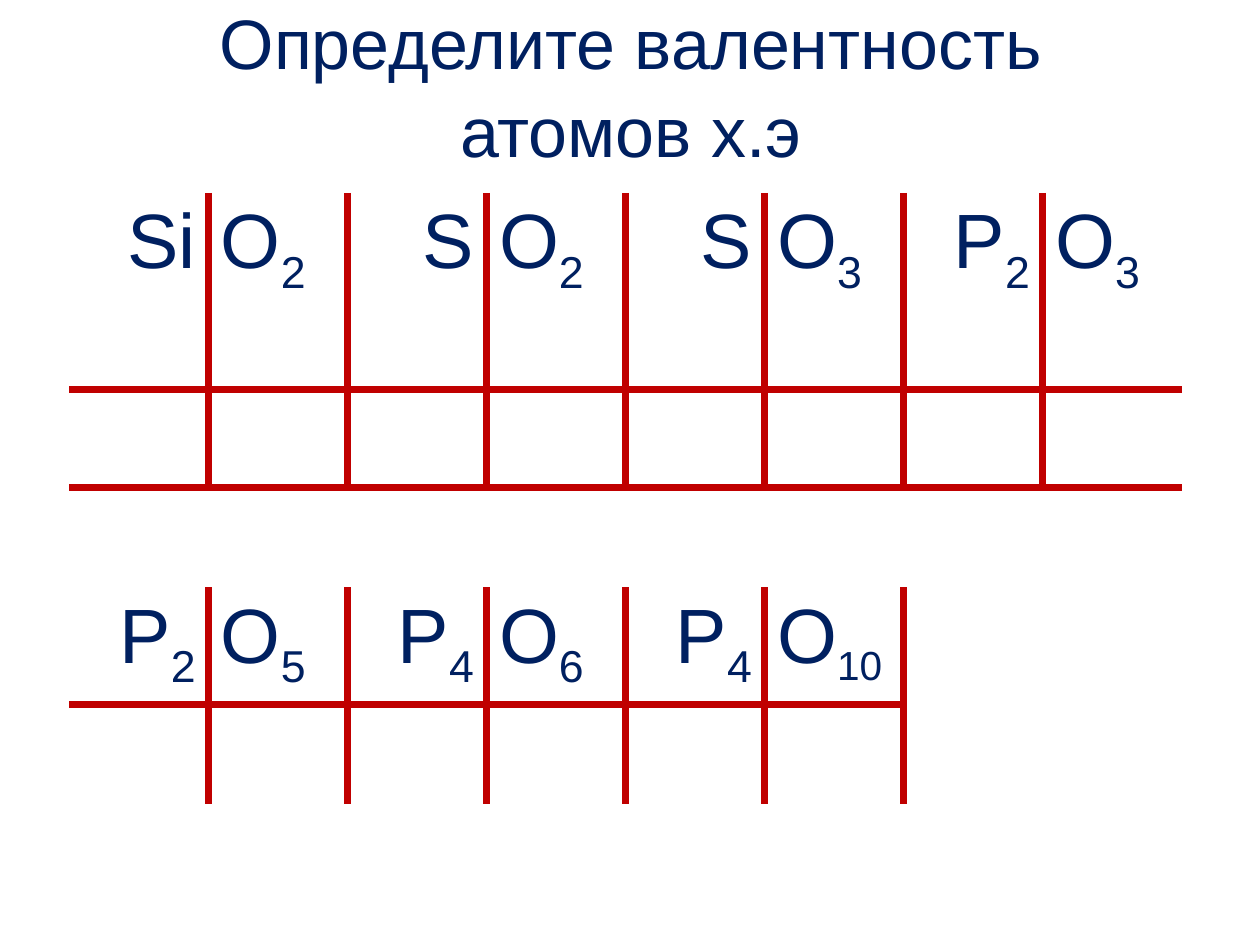
from dataclasses import dataclass

from lxml import etree
from pptx import Presentation
from pptx.dml.color import RGBColor
from pptx.enum.text import MSO_ANCHOR, PP_ALIGN
from pptx.oxml.ns import qn
from pptx.util import Inches, Pt

MIDDLE = MSO_ANCHOR.MIDDLE
LEFT, CENTER, RIGHT = PP_ALIGN.LEFT, PP_ALIGN.CENTER, PP_ALIGN.RIGHT
NAVY, RED = "002060", "C00000"
FONT = "Arial"
NO_GRID_STYLE = "{2D5ABB26-0587-4C30-8999-92F81FD0307C}"
ROW_HEIGHTS = (1.56, 0.78, 0.79, 0.87, 0.79)
COLUMN_COUNT = 8
TABLE_WIDTH = 8.83


@dataclass(frozen=True)
class Atom:
    symbol: str
    index: str = ""
    index_size: int = 44


@dataclass(frozen=True)
class Oxide:
    row: int
    position: int
    element: Atom
    oxygen: Atom


OXIDES = (
    Oxide(0, 0, Atom("Si"), Atom("O", "2")),
    Oxide(0, 1, Atom("S"), Atom("O", "2")),
    Oxide(0, 2, Atom("S"), Atom("O", "3")),
    Oxide(0, 3, Atom("P", "2"), Atom("O", "3")),
    Oxide(3, 0, Atom("P", "2"), Atom("O", "5")),
    Oxide(3, 1, Atom("P", "4"), Atom("O", "6")),
    Oxide(3, 2, Atom("P", "4"), Atom("O", "10", 40)),
)


def colour(value: str) -> RGBColor:
    return RGBColor.from_string(value)


def add_run(paragraph, text: str, size: float, baseline: int = 0) -> None:
    run = paragraph.add_run()
    run.text = text
    run.font.name = FONT
    run.font.size = Pt(size)
    run.font.color.rgb = colour(NAVY)
    if baseline:
        run.font._element.set("baseline", str(baseline * 1000))


def write_atom(cell, atom: Atom, alignment) -> None:
    paragraph = cell.text_frame.paragraphs[0]
    paragraph.alignment = alignment
    add_run(paragraph, atom.symbol, 44)
    if atom.index:
        add_run(paragraph, atom.index, atom.index_size, -25)


def add_borders(cell, sides: str) -> None:
    properties = cell._tc.get_or_add_tcPr()
    for side in sides:
        line = etree.SubElement(properties, qn(f"a:ln{side}"), w=str(Pt(4.5)))
        fill = etree.SubElement(line, qn("a:solidFill"))
        etree.SubElement(fill, qn("a:srgbClr"), val=RED)


def draw_oxide(table, oxide: Oxide) -> None:
    column = 2 * oxide.position
    halves = ((oxide.element, RIGHT, "R"), (oxide.oxygen, LEFT, "L"))
    for offset, (atom, alignment, inner_side) in enumerate(halves):
        formula_cell = table.cell(oxide.row, column + offset)
        write_atom(formula_cell, atom, alignment)
        add_borders(formula_cell, inner_side + "B")
        add_borders(table.cell(oxide.row + 1, column + offset), inner_side + "T")


def add_title(slide) -> None:
    title = slide.shapes.add_textbox(Inches(0.98), Inches(0.23), Inches(8.05), Inches(0.86))
    frame = title.text_frame
    frame.word_wrap = True
    frame.vertical_anchor = MIDDLE
    paragraph = frame.paragraphs[0]
    paragraph.alignment = CENTER
    paragraph.line_spacing = 1.05
    add_run(paragraph, "Определите валентность атомов х.э", 40)


def add_valence_table(slide) -> None:
    table = slide.shapes.add_table(
        len(ROW_HEIGHTS), COLUMN_COUNT, Inches(0.55), Inches(1.53),
        Inches(TABLE_WIDTH), Inches(sum(ROW_HEIGHTS)),
    ).table
    table.first_row = False
    table.horz_banding = False
    table._tbl.tblPr.find(qn("a:tableStyleId")).text = NO_GRID_STYLE
    for row, height in zip(table.rows, ROW_HEIGHTS):
        row.height = Inches(height)
    for oxide in OXIDES:
        draw_oxide(table, oxide)
    for cell in table.iter_cells():
        cell.fill.background()


def main() -> None:
    presentation = Presentation()
    presentation.slide_width = Inches(10)
    presentation.slide_height = Inches(7.5)
    slide = presentation.slides.add_slide(presentation.slide_layouts[6])
    add_title(slide)
    add_valence_table(slide)
    presentation.save("out.pptx")


if __name__ == "__main__":
    main()
